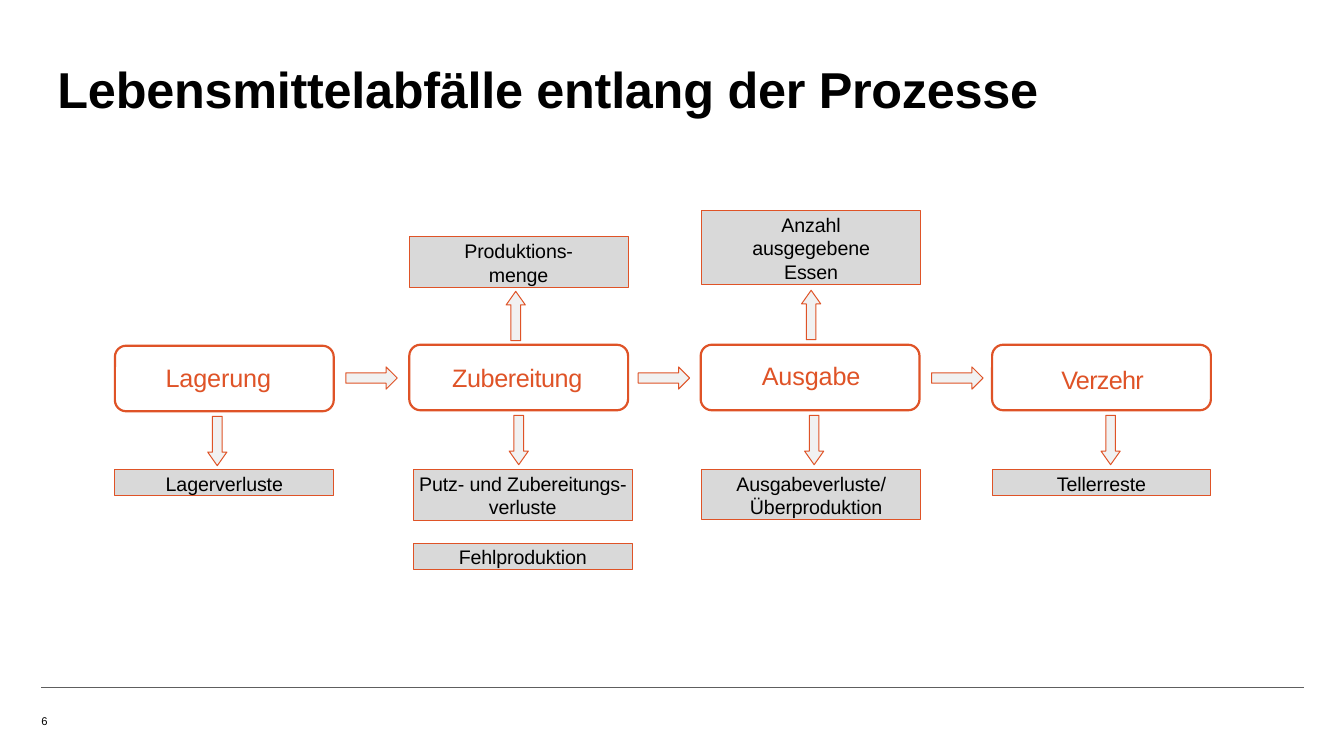
from dataclasses import dataclass

import pptx
import pptx.dml.color
import pptx.enum.shapes
import pptx.enum.text
import pptx.oxml
import pptx.util
from pptx.oxml.ns import qn

Inches = pptx.util.Inches
Pt = pptx.util.Pt
RGBColor = pptx.dml.color.RGBColor
Preset = pptx.enum.shapes.MSO_SHAPE
Align = pptx.enum.text.PP_ALIGN
Anchor = pptx.enum.text.MSO_ANCHOR
AutoSize = pptx.enum.text.MSO_AUTO_SIZE

ORANGE = RGBColor(0xDF, 0x53, 0x27)
BOX_GREY = RGBColor(0xD9, 0xD9, 0xD9)
ARROW_GREY = RGBColor(0xF1, 0xF1, 0xF1)
RULE_GREY = RGBColor(0x5E, 0x5E, 0x5E)
BLACK = RGBColor(0x00, 0x00, 0x00)

LINE_BREAK = "\v"
BOX_WIDTH = 2.17
STEP_HEIGHT = 0.65
LOSS_TOP = 4.66
STEP_ARROW_SIZE = (0.51, 0.22)
BRANCH_ARROW_SIZE = (0.19, 0.49)


@dataclass(frozen=True)
class TextLine:
    text: str
    left_margin: float = 0
    right_margin: float = 0
    indent: float = 0
    space_before: float = 0


@dataclass(frozen=True)
class Style:
    size: float
    color: RGBColor
    spacing: float = 0
    bold: bool = False
    align: Align = Align.CENTER


@dataclass(frozen=True)
class Step:
    """One process step with its label box."""
    name: str
    left: float
    top: float
    label: tuple[float, float, float]
    spacing: float


@dataclass(frozen=True)
class Note:
    left: float
    top: float
    height: float
    lines: tuple[TextLine, ...]


@dataclass(frozen=True)
class Arrow:
    preset: Preset
    left: float
    top: float
    size: tuple[float, float]
    adjustments: tuple[float, float]


STEPS = (
    Step("Lagerung", 1.14, 3.43, (1.58, 3.57, 1.15), -0.1),
    Step("Zubereitung", 4.06, 3.42, (4.38, 3.57, 1.48), -0.3),
    Step("Ausgabe", 6.95, 3.42, (7.5, 3.55, 1.07), -0.1),
    Step("Verzehr", 9.84, 3.42, (10.45, 3.59, 0.95), -0.5),
)

NOTES = (
    Note(4.06, 2.35, 0.5, (TextLine(f"Produktions-{LINE_BREAK}menge", space_before=1.8),)),
    Note(6.96, 2.09, 0.73, (
        TextLine("Anzahl", space_before=1.6),
        TextLine("ausgegebene Essen", left_margin=0.4, right_margin=0.4),
    )),
    Note(1.14, LOSS_TOP, 0.26, (TextLine("Lagerverluste", space_before=1.8),)),
    Note(4.1, LOSS_TOP, 0.5, (TextLine("Putz- und Zubereitungs-verluste", space_before=1.8),)),
    Note(4.1, 5.39, 0.26, (TextLine("Fehlproduktion", space_before=1.8),)),
    Note(6.96, LOSS_TOP, 0.49, (
        TextLine("Ausgabeverluste/ Überproduktion", 0.3, 0.2, -0.1, 1.6),
    )),
    Note(9.84, LOSS_TOP, 0.26, (TextLine("Tellerreste", space_before=1.8),)),
)

STEP_ARROWS = [
    Arrow(Preset.RIGHT_ARROW, left, 3.64, STEP_ARROW_SIZE, (0.47, 0.5))
    for left in (3.43, 6.33, 9.24)
]
BRANCH_ARROWS = [
    Arrow(preset, left, top, BRANCH_ARROW_SIZE, (0.5, 0.71))
    for preset, left, top in (
        (Preset.DOWN_ARROW, 2.06, 4.13),
        (Preset.DOWN_ARROW, 5.05, 4.12),
        (Preset.DOWN_ARROW, 7.98, 4.12),
        (Preset.DOWN_ARROW, 10.92, 4.12),
        (Preset.UP_ARROW, 5.02, 2.89),
        (Preset.UP_ARROW, 7.95, 2.88),
    )
]


def set_text(shape, lines: tuple[TextLine, ...], style: Style,
             anchor: Anchor = Anchor.TOP, top_inset: float = 0.02,
             auto_size: AutoSize = AutoSize.SHAPE_TO_FIT_TEXT) -> None:
    frame = shape.text_frame
    frame_format = {
        "margin_left": 0, "margin_right": 0, "margin_bottom": 0,
        "margin_top": Inches(top_inset), "word_wrap": True,
        "vertical_anchor": anchor, "auto_size": auto_size,
    }
    for name, value in frame_format.items():
        setattr(frame, name, value)
    font_format = {"name": "Arial", "size": Pt(style.size), "bold": style.bold}
    for index, line in enumerate(lines):
        paragraph = frame.add_paragraph() if index else frame.paragraphs[0]
        paragraph.text = line.text
        paragraph.alignment = style.align
        paragraph.space_before = Pt(line.space_before)
        margins = {"marL": line.left_margin, "marR": line.right_margin, "indent": line.indent}
        properties = paragraph._p.get_or_add_pPr()
        for name, value in margins.items():
            properties.set(name, str(Inches(value)))
        for run in paragraph.runs:
            for name, value in font_format.items():
                setattr(run.font, name, value)
            run.font.color.rgb = style.color
            run._r.get_or_add_rPr().set("spc", str(round(style.spacing * 100)))


def add_text_box(slide, left: float, top: float, width: float, height: float):
    return slide.shapes.add_textbox(Inches(left), Inches(top), Inches(width), Inches(height))


def add_outlined(slide, preset: Preset, left: float, top: float, width: float, height: float,
                 line_width: float, fill: RGBColor | None = None):
    """Add a preset shape with an orange outline, unfilled if no fill is given."""
    shape = slide.shapes.add_shape(
        preset, Inches(left), Inches(top), Inches(width), Inches(height))
    shape.shadow.inherit = False
    if fill is None:
        shape.fill.background()
    else:
        shape.fill.solid()
        shape.fill.fore_color.rgb = fill
    shape.line.color.rgb = ORANGE
    shape.line.width = Pt(line_width)
    return shape


def add_step(slide, step: Step) -> None:
    box = add_outlined(slide, Preset.ROUNDED_RECTANGLE, step.left, step.top,
                       BOX_WIDTH, STEP_HEIGHT, 1.56)
    box.adjustments[0] = 0.17
    label = add_text_box(slide, *step.label, 0.32)
    set_text(label, (TextLine(step.name, left_margin=0.02, space_before=1.2),),
             Style(18, ORANGE, step.spacing))


def add_note(slide, note: Note) -> None:
    box = add_outlined(slide, Preset.RECTANGLE, note.left, note.top,
                       BOX_WIDTH, note.height, 0.72, BOX_GREY)
    set_text(box, note.lines, Style(14, BLACK, -0.1))


def add_arrow(slide, arrow: Arrow) -> None:
    shape = add_outlined(slide, arrow.preset, arrow.left, arrow.top, *arrow.size,
                         0.72, ARROW_GREY)
    for index, value in enumerate(arrow.adjustments):
        shape.adjustments[index] = value


def add_footer(slide) -> None:
    rule = slide.shapes.add_connector(
        pptx.enum.shapes.MSO_CONNECTOR.STRAIGHT,
        Inches(0.41), Inches(6.82), Inches(12.93), Inches(6.82))
    rule.line.color.rgb = RULE_GREY
    rule.line.width = Pt(0.5)
    rule._element.spPr.append(pptx.oxml.xmlchemy.OxmlElement("a:effectLst"))
    set_text(add_text_box(slide, 0.41, 6.9, 1.57, 0.32), (TextLine("6"),),
             Style(8, BLACK, align=Align.LEFT), Anchor.BOTTOM, 0, AutoSize.NONE)


def main() -> None:
    presentation = pptx.Presentation()
    presentation.slide_width = Inches(13.33)
    presentation.slide_height = Inches(7.5)
    slide = presentation.slides.add_slide(presentation.slide_layouts[6])
    add_footer(slide)
    set_text(add_text_box(slide, 0.57, 0.58, 9.81, 0.62),
             (TextLine("Lebensmittelabfälle entlang der Prozesse"),),
             Style(36, BLACK, -0.2, True, Align.LEFT), top_inset=0, auto_size=AutoSize.NONE)
    for step in STEPS:
        add_step(slide, step)
    for note in NOTES:
        add_note(slide, note)
    for arrow in STEP_ARROWS + BRANCH_ARROWS:
        add_arrow(slide, arrow)
    presentation.save("out.pptx")


if __name__ == "__main__":
    main()
